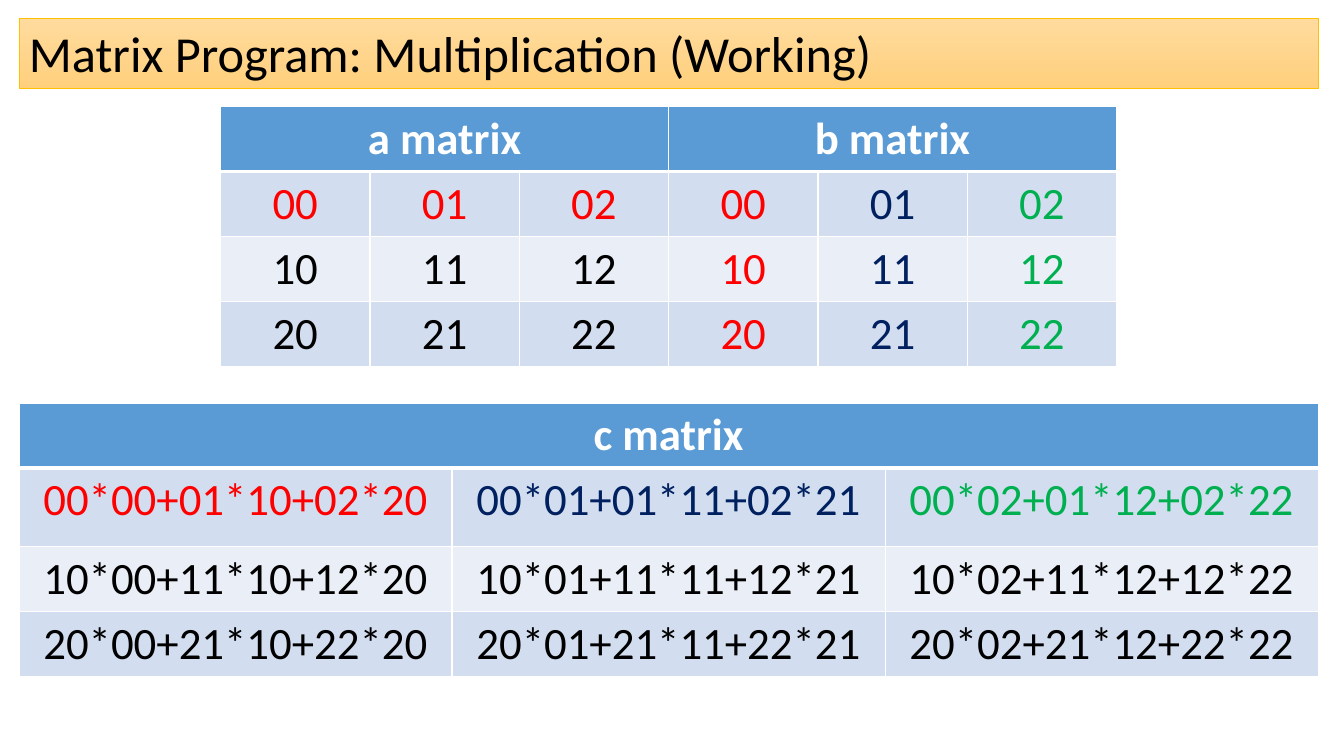
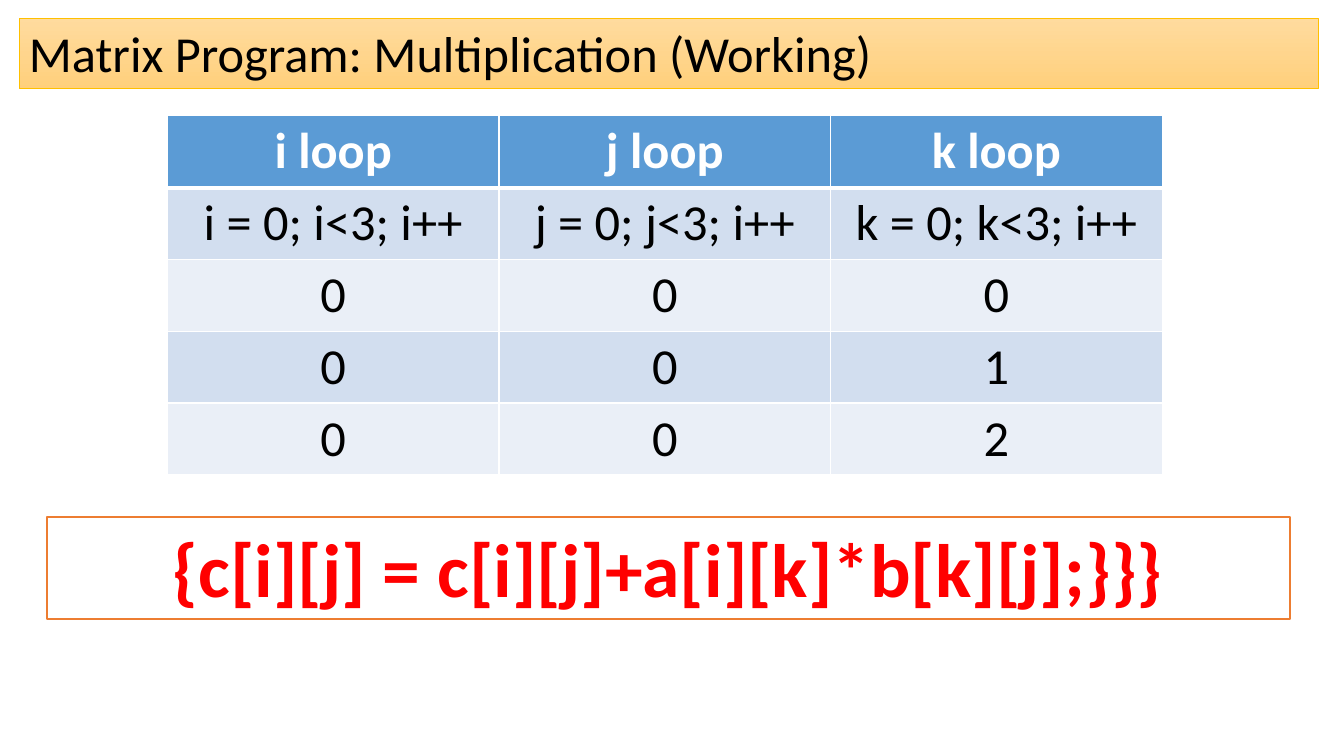
"""Build two slides that work through matrix multiplication."""
from dataclasses import dataclass

from pptx import Presentation, oxml
from pptx import util as u
from pptx.dml import color
from pptx.enum import shapes, text
from pptx.oxml import ns


@dataclass(frozen=True)
class Theme:
    font: str = "Calibri"
    black: str = "000000"
    white: str = "FFFFFF"
    red: str = "FF0000"
    navy: str = "002060"
    green: str = "00B050"
    header: str = "5B9BD5"
    bands: tuple[str, str] = ("D2DEEF", "EAEFF7")
    title_top: str = "FFDB9E"
    title_bottom: str = "FFD07C"
    title_line: str = "FFC000"
    formula_line: str = "ED7D31"
    title_size: int = 36
    matrix_size: int = 32
    loop_size: int = 36
    formula_size: int = 54


@dataclass(frozen=True)
class Frame:
    left: float
    top: float
    width: float
    height: float

    def lengths(self) -> tuple:
        return tuple(u.Cm(n) for n in (self.left, self.top, self.width, self.height))


@dataclass(frozen=True)
class Entry:
    text: str
    ink: str = "000000"


@dataclass(frozen=True)
class Grid:
    frame: Frame
    row_heights: list[float]
    size: int
    headings: list[str]
    rows: list[list[Entry]]


THEME = Theme()
TITLE = "Matrix Program: Multiplication (Working)"
TITLE_FRAME = Frame(0.48, 0.46, 32.74, 1.78)
FORMULA_FRAME = Frame(1.19, 13.03, 31.32, 2.57)
ORDER = range(3)
COLUMN_INKS = (THEME.red, THEME.navy, THEME.green)
MATRIX_ROW = 1.63
LOOP_ROW = 1.8


def rgb(value: str) -> color.RGBColor:
    return color.RGBColor.from_string(value)


def write(frame, words: str, size: int, ink: str, bold: bool = False, centred: bool = True) -> None:
    frame.text = words
    para = frame.paragraphs[0]
    para.alignment = text.PP_ALIGN.CENTER if centred else text.PP_ALIGN.LEFT
    for span in para.runs:
        span.font.name = THEME.font
        span.font.size = u.Pt(size)
        span.font.bold = bold
        span.font.color.rgb = rgb(ink)


def add_box(page, frame: Frame, line: str, line_width: float):
    box = page.shapes.add_shape(shapes.MSO_SHAPE.RECTANGLE, *frame.lengths())
    box.shadow.inherit = False
    box.line.color.rgb = rgb(line)
    box.line.width = u.Pt(line_width)
    box.text_frame.word_wrap = True
    return box


def add_page(deck):
    page = deck.slides.add_slide(deck.slide_layouts[6])
    box = add_box(page, TITLE_FRAME, THEME.title_line, 0.5)
    box.fill.gradient()
    box.fill.gradient_angle = 270
    for stop, value in zip(box.fill.gradient_stops, (THEME.title_top, THEME.title_bottom)):
        stop.color.rgb = rgb(value)
    box.text_frame.vertical_anchor = text.MSO_ANCHOR.BOTTOM
    write(box.text_frame, TITLE, THEME.title_size, THEME.black, centred=False)
    box.text_frame.paragraphs[0].line_spacing = 0.9
    return page


def paint_cell(cell, fill: str, top: float, bottom: float) -> None:
    cell.fill.solid()
    cell.fill.fore_color.rgb = rgb(fill)
    properties = cell._tc.get_or_add_tcPr()
    for place, (side, width) in enumerate((("L", 1), ("R", 1), ("T", top), ("B", bottom))):
        border = oxml.parse_xml(
            f'<a:ln{side} {ns.nsdecls("a")} w="{u.Pt(width)}"><a:solidFill>'
            f'<a:srgbClr val="{THEME.white}"/></a:solidFill></a:ln{side}>'
        )
        properties.insert(place, border)


def add_grid(page, grid: Grid) -> None:
    row_count, column_count = len(grid.row_heights), len(grid.rows[0])
    table = page.shapes.add_table(row_count, column_count, *grid.frame.lengths()).table
    for column in table.columns:
        column.width = u.Cm(grid.frame.width / column_count)
    for row, height in zip(table.rows, grid.row_heights):
        row.height = u.Cm(height)
    for column in range(column_count):
        paint_cell(table.cell(0, column), THEME.header, 1, 3)
    reach = column_count // len(grid.headings)
    for number, heading in enumerate(grid.headings):
        cell = table.cell(0, number * reach)
        if reach > 1:
            cell.merge(table.cell(0, (number + 1) * reach - 1))
        write(cell.text_frame, heading, grid.size, THEME.white, bold=True)
    for number, entries in enumerate(grid.rows, start=1):
        for column, entry in enumerate(entries):
            cell = table.cell(number, column)
            paint_cell(cell, THEME.bands[(number - 1) % 2], 3 if number == 1 else 1, 1)
            write(cell.text_frame, entry.text, grid.size, entry.ink)


def row_ink(row: int, ink: str) -> str:
    return ink if row == 0 else THEME.black


def factor_grid() -> Grid:
    rows = [
        [Entry(f"{i}{j}", row_ink(i, THEME.red)) for j in ORDER]
        + [Entry(f"{i}{j}", COLUMN_INKS[j]) for j in ORDER]
        for i in ORDER
    ]
    heights = [MATRIX_ROW] * 4
    frame = Frame(5.56, 2.69, 22.58, sum(heights))
    return Grid(frame, heights, THEME.matrix_size, ["a matrix", "b matrix"], rows)


def product_grid() -> Grid:
    rows = [
        [Entry("+".join(f"{i}{k}*{k}{j}" for k in ORDER), row_ink(i, COLUMN_INKS[j])) for j in ORDER]
        for i in ORDER
    ]
    heights = [MATRIX_ROW, 1.98, MATRIX_ROW, MATRIX_ROW]
    frame = Frame(TITLE_FRAME.left, 10.16, TITLE_FRAME.width, sum(heights))
    return Grid(frame, heights, THEME.matrix_size, ["c matrix"], rows)


def loop_grid() -> Grid:
    rows = [[Entry(f"{name} = 0; {name}<3; i++") for name in "ijk"]]
    rows += [[Entry("0"), Entry("0"), Entry(str(k))] for k in ORDER]
    heights = [LOOP_ROW] * 5
    frame = Frame(4.22, 2.92, 25.07, sum(heights))
    return Grid(frame, heights, THEME.loop_size, [f"{name} loop" for name in "ijk"], rows)


def add_formula(page) -> None:
    box = add_box(page, FORMULA_FRAME, THEME.formula_line, 1)
    box.fill.solid()
    box.fill.fore_color.rgb = rgb(THEME.white)
    box.text_frame.vertical_anchor = text.MSO_ANCHOR.TOP
    box.text_frame.auto_size = text.MSO_AUTO_SIZE.SHAPE_TO_FIT_TEXT
    write(box.text_frame, "{c[i][j] = c[i][j]+a[i][k]*b[k][j];}}}", THEME.formula_size, THEME.red, bold=True)


def main() -> None:
    deck = Presentation()
    deck.slide_width, deck.slide_height = u.Cm(33.87), u.Cm(19.05)
    matrix_page = add_page(deck)
    add_grid(matrix_page, factor_grid())
    add_grid(matrix_page, product_grid())
    loop_page = add_page(deck)
    add_grid(loop_page, loop_grid())
    add_formula(loop_page)
    deck.save("out.pptx")


if __name__ == "__main__":
    main()
